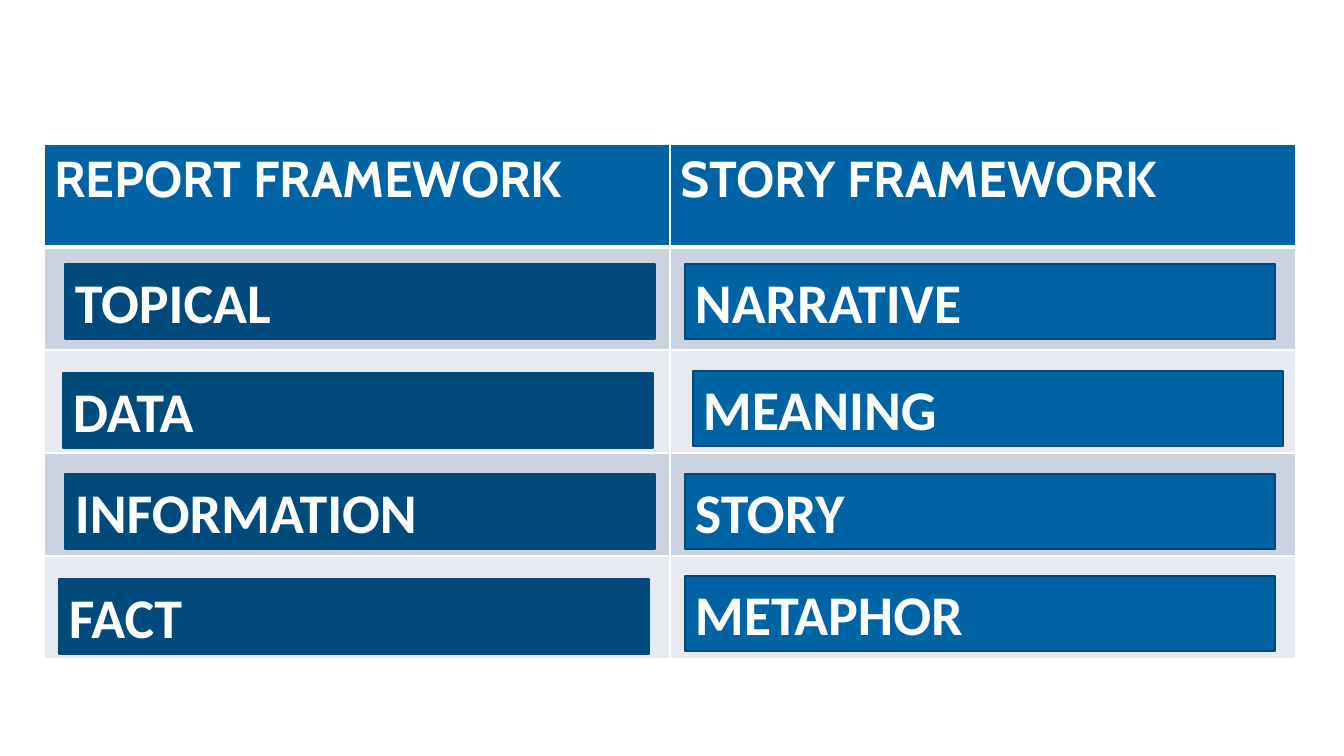
from dataclasses import dataclass

from lxml.etree import SubElement
from pptx import Presentation
from pptx.dml.color import RGBColor as Rgb
from pptx.enum.shapes import MSO_SHAPE as Preset
from pptx.enum.text import MSO_ANCHOR as Anchor, PP_ALIGN as Align
from pptx.oxml.ns import qn
from pptx.util import Emu, Pt

PX_PER_INCH = 100.8


@dataclass(frozen=True)
class Theme:
    """Colours, fonts and type sizes of the slide."""
    blue: str = "0064A4"
    navy: str = "004B7B"
    outline: str = "004A79"
    white: str = "FFFFFF"
    bands: tuple = ("CCD3E0", "E7EAF0")
    heading_font: str = "Cabin"
    bar_font: str = "Calibri"
    heading_size: int = 36
    bar_size: int = 40


THEME = Theme()
BAR_WIDTH, BAR_HEIGHT = 590, 75
FRAMEWORKS = [
    ("REPORT FRAMEWORK", THEME.navy,
     [("TOPICAL", 21, 17), ("DATA", 19, 23), ("INFORMATION", 21, 21), ("FACT", 15, 23)]),
    ("STORY FRAMEWORK", THEME.blue,
     [("NARRATIVE", 15, 17), ("MEANING", 23, 21), ("STORY", 15, 21), ("METAPHOR", 15, 20)]),
]


def px(length):
    """Turn pixels into EMU."""
    return Emu(round(length * 914400 / PX_PER_INCH))


def write(frame, wording, font_name, size):
    """Set bold white left-aligned text in a frame."""
    frame.text = wording
    paragraph = frame.paragraphs[0]
    paragraph.alignment = Align.LEFT
    font = paragraph.runs[0].font
    font.name, font.size, font.bold = font_name, Pt(size), True
    font.color.rgb = Rgb.from_string(THEME.white)


def paint_cell(cell, colour, bottom_width):
    """Fill a cell and give it white borders."""
    properties = cell._tc.get_or_add_tcPr()
    for side, width in (("L", 1), ("R", 1), ("T", 1), ("B", bottom_width)):
        border = SubElement(properties, qn(f"a:ln{side}"), w=str(Pt(width)))
        solid = SubElement(border, qn("a:solidFill"))
        SubElement(solid, qn("a:srgbClr"), val=THEME.white)
    cell.fill.solid()
    cell.fill.fore_color.rgb = Rgb.from_string(colour)


def add_grid(slide, left, top, column_width, row_height):
    """Place the table with one heading row and banded rows beneath."""
    row_count = 1 + len(FRAMEWORKS[0][2])
    grid = slide.shapes.add_table(
        row_count, len(FRAMEWORKS), px(left), px(top),
        px(column_width * len(FRAMEWORKS)), px(row_height * row_count)).table
    for row in grid.rows:
        row.height = px(row_height)
    for column, (heading, _, _) in enumerate(FRAMEWORKS):
        grid.columns[column].width = px(column_width)
        paint_cell(grid.cell(0, column), THEME.blue, 3)
        write(grid.cell(0, column).text_frame, heading,
              THEME.heading_font, THEME.heading_size)
        for row in range(1, row_count):
            paint_cell(grid.cell(row, column), THEME.bands[(row - 1) % 2], 1)


def add_bar(slide, left, top, wording, colour):
    """Place one labelled bar."""
    bar = slide.shapes.add_shape(
        Preset.RECTANGLE, px(left), px(top), px(BAR_WIDTH), px(BAR_HEIGHT))
    bar.shadow.inherit = False
    bar.fill.solid()
    bar.fill.fore_color.rgb = Rgb.from_string(colour)
    bar.line.color.rgb = Rgb.from_string(THEME.outline)
    bar.line.width = Pt(1)
    bar.text_frame.word_wrap = True
    bar.text_frame.vertical_anchor = Anchor.MIDDLE
    write(bar.text_frame, wording, THEME.bar_font, THEME.bar_size)


def add_comparison(slide, left, top, column_width, row_height):
    """Place the table and a bar in each cell below its headings."""
    add_grid(slide, left, top, column_width, row_height)
    for column, (_, colour, bars) in enumerate(FRAMEWORKS):
        for row, (wording, inset_x, inset_y) in enumerate(bars, start=1):
            add_bar(slide, left + column * column_width + inset_x,
                    top + row * row_height + inset_y, wording, colour)


def main():
    """Build and save the slide."""
    deck = Presentation()
    deck.slide_width, deck.slide_height = px(1344), px(756)
    slide = deck.slides.add_slide(deck.slide_layouts[6])
    add_comparison(slide, left=44, top=144, column_width=626, row_height=103)
    deck.save("out.pptx")


if __name__ == "__main__":
    main()
